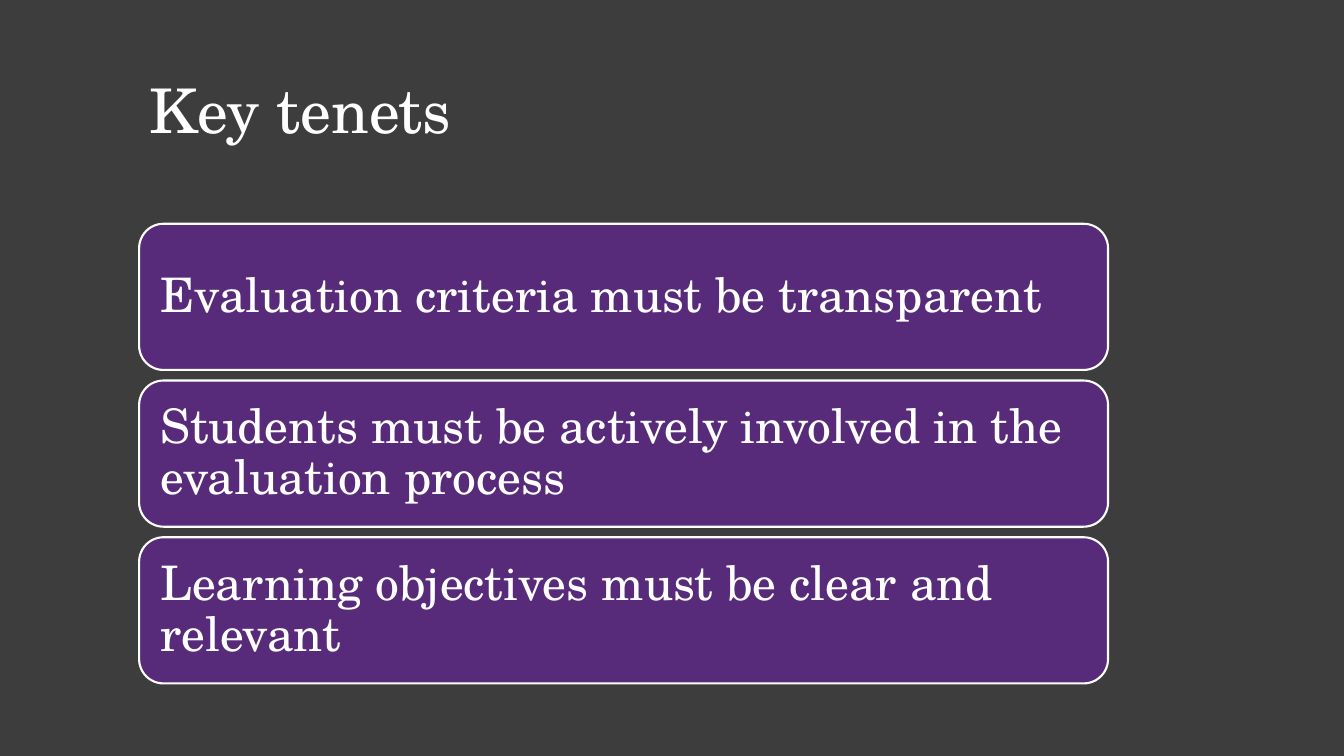
from pptx import Presentation
from pptx.dml.color import RGBColor as RGB
from pptx.enum.shapes import MSO_SHAPE as Preset
from pptx.enum.text import MSO_ANCHOR as Anchor, MSO_AUTO_SIZE as AutoSize, PP_ALIGN as Align
from pptx.util import Inches, Pt

COLORS = {"background": "3D3D3D", "card": "572B7A", "light": "FFFFFF"}
FONT = "TeX Gyre Schola"
TENETS = [
    "Evaluation criteria must be transparent",
    "Students must be actively involved in the evaluation process",
    "Learning objectives must be clear and relevant",
]

# Card column, in inches
LEFT, TOP = 1.38, 2.22
CARD_WIDTH, CARD_HEIGHT = 9.61, 1.45
ROW_PITCH = 1.555
CARD_INSET = 0.14


def color(name):
    return RGB.from_string(COLORS[name])


def write(frame, text, size):
    """Put one left-aligned, vertically centred paragraph in a frame."""
    frame.text = text
    frame.word_wrap = True
    frame.auto_size = AutoSize.NONE
    frame.vertical_anchor = Anchor.MIDDLE
    paragraph = frame.paragraphs[0]
    paragraph.alignment = Align.LEFT
    paragraph.line_spacing = 0.9
    paragraph.font.name = FONT
    paragraph.font.size = Pt(size)
    paragraph.font.color.rgb = color("light")


def add_title(slide, text):
    title = slide.shapes.title
    title.left, title.top = Inches(LEFT), Inches(0.4)
    title.width, title.height = Inches(10.6), Inches(1.45)
    write(title.text_frame, text, 44)


def add_tenet(slide, row, text):
    card = slide.shapes.add_shape(
        Preset.ROUNDED_RECTANGLE,
        Inches(LEFT), Inches(TOP + row * ROW_PITCH),
        Inches(CARD_WIDTH), Inches(CARD_HEIGHT),
    )
    card.shadow.inherit = False
    card.fill.solid()
    card.fill.fore_color.rgb = color("card")
    card.line.color.rgb = color("light")
    card.line.width = Pt(1.5)
    frame = card.text_frame
    frame.margin_left = frame.margin_right = Inches(CARD_INSET)
    frame.margin_top = frame.margin_bottom = Inches(CARD_INSET)
    write(frame, text, 34)


def main():
    deck = Presentation()
    deck.slide_width, deck.slide_height = Inches(13.33), Inches(7.5)
    slide = deck.slides.add_slide(deck.slide_layouts.get_by_name("Title Only"))

    # Background
    slide.background.fill.solid()
    slide.background.fill.fore_color.rgb = color("background")

    # Title and tenet cards
    add_title(slide, "Key tenets")
    for row, tenet in enumerate(TENETS):
        add_tenet(slide, row, tenet)

    deck.save("out.pptx")


if __name__ == "__main__":
    main()
